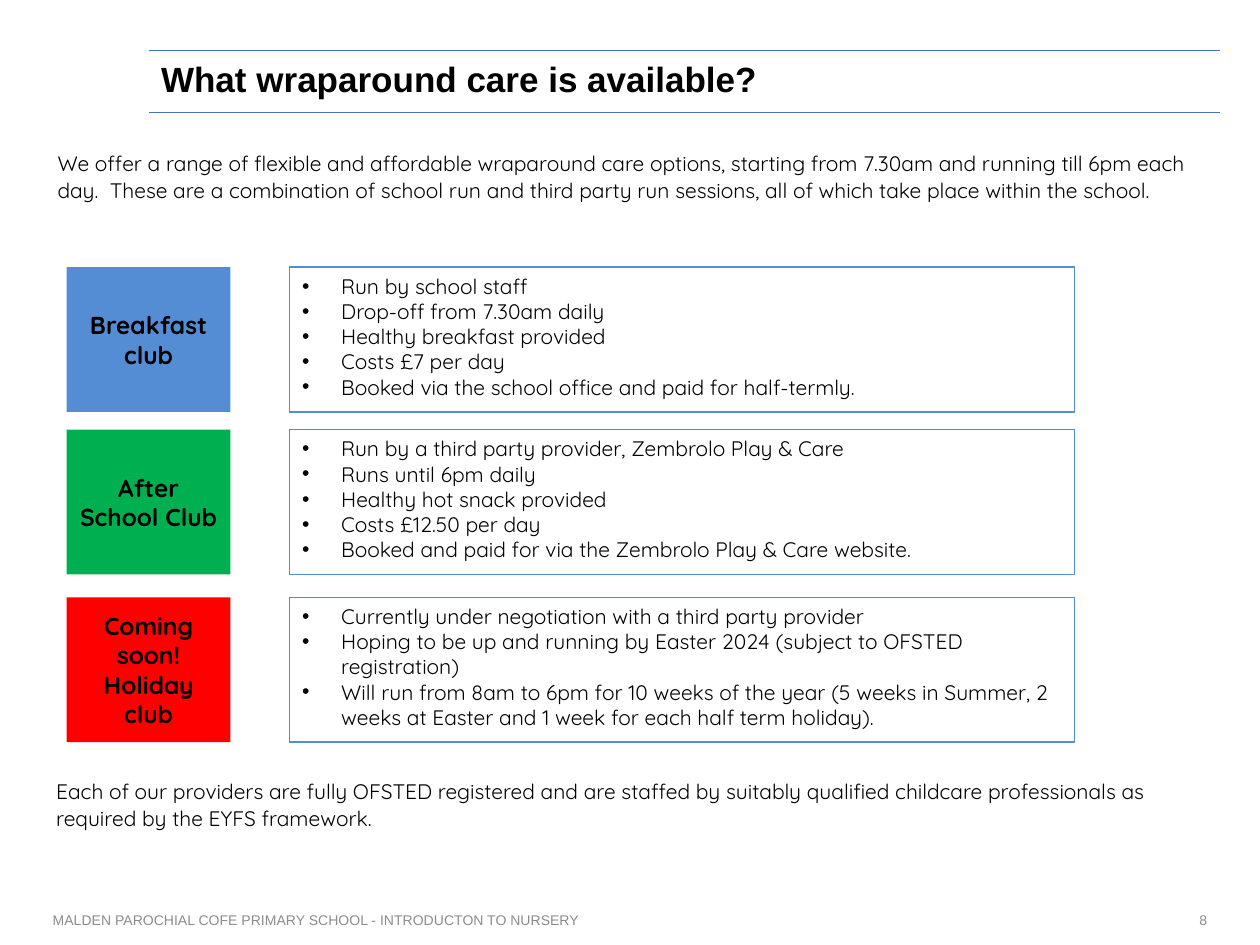
from typing import NamedTuple

from lxml.etree import SubElement
from pptx import Presentation
from pptx.dml.color import RGBColor
from pptx.enum.shapes import MSO_CONNECTOR as Link, MSO_SHAPE as Kind
from pptx.enum.text import MSO_ANCHOR as Anchor, PP_ALIGN as Align
from pptx.oxml.ns import qn
from pptx.util import Inches, Pt

# Grid of 100 columns by 75 rows, each cell a tenth of an inch
CELL = Inches(0.1)
LEFT, RIGHT = 3.2, 96.8
HEAD_X, HEAD_TOP, HEAD_END = 11.8, 4, 8.9
TAG_X, TAG_W = 5.3, 13
LIST_X, LIST_W = 23, 62.3
CLUB_H = 11.5
FOOT_Y, FOOT_H = 71, 4
BLUE, RULE, GREY = "548DD4", "4472C4", "8C8C8C"
BODY = "Quicksand"


class Box(NamedTuple):
    x: float
    y: float
    w: float
    h: float


class Club(NamedTuple):
    top: float
    name: str
    fill: str
    facts: list[str]


CLUBS = [
    Club(21.2, "Breakfast club", BLUE, [
        "Run by school staff",
        "Drop-off from 7.30am daily",
        "Healthy breakfast provided",
        "Costs £7 per day",
        "Booked via the school office and paid for half-termly.",
    ]),
    Club(34.1, "After School Club", "00B050", [
        "Run by a third party provider, Zembrolo Play & Care",
        "Runs until 6pm daily",
        "Healthy hot snack provided",
        "Costs £12.50 per day",
        "Booked and paid for via the Zembrolo Play & Care website.",
    ]),
    Club(47.4, "Coming soon! Holiday club", "FF0000", [
        "Currently under negotiation with a third party provider",
        "Hoping to be up and running by Easter 2024 (subject to OFSTED registration)",
        "Will run from 8am to 6pm for 10 weeks of the year (5 weeks in Summer, "
        "2 weeks at Easter and 1 week for each half term holiday).",
    ]),
]
INTRO = (
    "We offer a range of flexible and affordable wraparound care options, "
    "starting from 7.30am and running till 6pm each day.  These are a combination "
    "of school run and third party run sessions, all of which take place within the school."
)
CLOSE = (
    "Each of our providers are fully OFSTED registered and are staffed by suitably "
    "qualified childcare professionals as required by the EYFS framework."
)


def color(code: str) -> RGBColor:
    return RGBColor.from_string(code)


def cells(*spans: float) -> list[int]:
    return [round(span * CELL) for span in spans]


def bullet(para) -> None:
    """Give a paragraph a hanging round bullet."""
    props = para._p.get_or_add_pPr()
    props.set("marL", str(Inches(0.31)))
    props.set("indent", str(-Inches(0.31)))
    SubElement(props, qn("a:buFont"), typeface="Arial")
    SubElement(props, qn("a:buChar"), char="•")


def write(shape, lines: list[str], *, size: float = 12, font: str = BODY,
          ink: str = "000000", bold: bool = False, align=Align.LEFT,
          anchor=Anchor.TOP, lead: float = 1, after: float = 0,
          dots: bool = False) -> None:
    frame = shape.text_frame
    frame.word_wrap = True
    frame.vertical_anchor = anchor
    for num, line in enumerate(lines):
        para = frame.add_paragraph() if num else frame.paragraphs[0]
        para.alignment = align
        para.line_spacing = lead
        para.space_after = Pt(after)
        if dots:
            bullet(para)
        run = para.add_run()
        run.text = line
        run.font.size = Pt(size)
        run.font.name = font
        run.font.bold = bold
        run.font.color.rgb = color(ink)


def panel(slide, kind, box: Box, fill: str = "", edge: str = ""):
    shape = slide.shapes.add_shape(kind, *cells(*box))
    shape.shadow.inherit = False
    if fill:
        shape.fill.solid()
        shape.fill.fore_color.rgb = color(fill)
    else:
        shape.fill.background()
    if edge:
        shape.line.color.rgb = color(edge)
        shape.line.width = Pt(0.75)
    else:
        shape.line.fill.background()
    return shape


def label(slide, box: Box, text: str, **style) -> None:
    shape = slide.shapes.add_textbox(*cells(*box))
    write(shape, [text], font="Arial", anchor=Anchor.MIDDLE, **style)


def rule(slide, y: float) -> None:
    line = slide.shapes.add_connector(Link.STRAIGHT, *cells(HEAD_X, y, RIGHT, y))
    line.line.color.rgb = color(RULE)
    line.line.width = Pt(0.5)
    SubElement(line._element.spPr, qn("a:effectLst"))


def note(slide, box: Box, text: str) -> None:
    write(panel(slide, Kind.ROUNDED_RECTANGLE, box), [text], lead=1.07, after=7)


def draw(slide, club: Club) -> None:
    tag = panel(slide, Kind.RECTANGLE, Box(TAG_X, club.top, TAG_W, CLUB_H), fill=club.fill)
    write(tag, [club.name], size=14, bold=True, align=Align.CENTER, anchor=Anchor.MIDDLE)
    facts = panel(slide, Kind.RECTANGLE, Box(LIST_X, club.top, LIST_W, CLUB_H), edge=BLUE)
    write(facts, club.facts, dots=True)


def main() -> None:
    deck = Presentation()
    deck.slide_width, deck.slide_height = cells(100, 75)
    slide = deck.slides.add_slide(deck.slide_layouts[6])

    for y in (HEAD_END, HEAD_TOP):
        rule(slide, y)
    label(slide, Box(HEAD_X, HEAD_TOP, RIGHT - HEAD_X, HEAD_END - HEAD_TOP),
          "What wraparound care is available?", size=20, bold=True, lead=0.9)
    label(slide, Box(LEFT, FOOT_Y, 63.7, FOOT_H),
          "MALDEN PAROCHIAL COFE PRIMARY SCHOOL - INTRODUCTON TO NURSERY",
          size=8, ink=GREY)
    label(slide, Box(RIGHT - 26.2, FOOT_Y, 26.2, FOOT_H), "8",
          size=8, ink=GREY, align=Align.RIGHT)

    note(slide, Box(LEFT, 10.9, RIGHT - LEFT, 8.1), INTRO)
    for club in CLUBS:
        draw(slide, club)
    note(slide, Box(LEFT, 60.9, 91.2, 5.7), CLOSE)
    deck.save("out.pptx")


if __name__ == "__main__":
    main()
